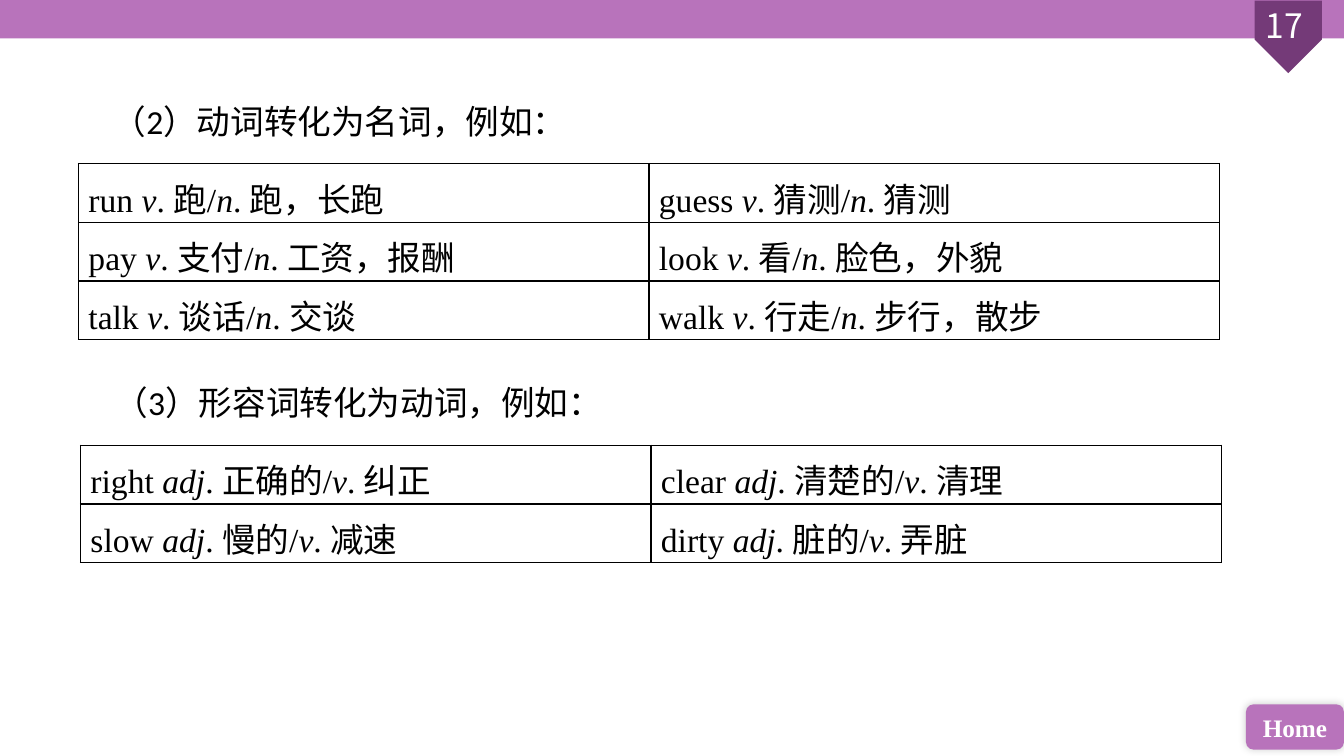
from lxml import etree
from pptx import Presentation
from pptx.dml.color import RGBColor
from pptx.enum.shapes import MSO_SHAPE
from pptx.enum.text import MSO_ANCHOR, PP_ALIGN
from pptx.oxml import parse_xml
from pptx.oxml.ns import qn
from pptx.util import Cm, Pt

RECT, PENTAGON, ROUNDED = MSO_SHAPE.RECTANGLE, MSO_SHAPE.PENTAGON, MSO_SHAPE.ROUNDED_RECTANGLE
CENTER, MIDDLE, TOP = PP_ALIGN.CENTER, MSO_ANCHOR.MIDDLE, MSO_ANCHOR.TOP
A_NS = 'xmlns:a="http://schemas.openxmlformats.org/drawingml/2006/main"'

LILAC, PLUM, WHITE, BLACK = "B873BB", "743A78", "FFFFFF", "000000"
CJK, SERIF, SANS = "Noto Sans CJK SC", "Times New Roman", "Calibri"

# Asterisks enclose the italic word classes
VERBS_TO_NOUNS = [
    ["run *v*. 跑/*n*. 跑，长跑", "guess *v*. 猜测/*n*. 猜测"],
    ["pay *v*. 支付/*n*. 工资，报酬", "look *v*. 看/*n*. 脸色，外貌"],
    ["talk *v*. 谈话/*n*. 交谈", "walk *v*. 行走/*n*. 步行，散步"],
]
ADJECTIVES_TO_VERBS = [
    ["right *adj*. 正确的/*v*. 纠正", "clear *adj*. 清楚的/*v*. 清理"],
    ["slow *adj*. 慢的/*v*. 减速", "dirty *adj*. 脏的/*v*. 弄脏"],
]


def rgb(color):
    return RGBColor.from_string(color)


def format_run(r, font, size, color, bold=False, italic=False):
    r.font.name, r.font.size = font, Pt(size)
    r.font.bold, r.font.italic = bold, italic
    r.font.color.rgb = rgb(color)
    etree.SubElement(r.font._element, qn("a:ea")).set("typeface", CJK)


def set_margins(frame, left=0.25, top=0):
    frame.margin_left = frame.margin_right = Cm(left)
    frame.margin_top = frame.margin_bottom = Cm(top)


def add_block(s, kind, x, y, w, h, color):
    sp = s.shapes.add_shape(kind, Cm(x), Cm(y), Cm(w), Cm(h))
    sp.shadow.inherit = False
    sp.fill.solid()
    sp.fill.fore_color.rgb = rgb(color)
    sp.line.fill.background()
    return sp


def add_text(s, x, y, w, h, text, font, size, color):
    tf = s.shapes.add_textbox(Cm(x), Cm(y), Cm(w), Cm(h)).text_frame
    tf.word_wrap = True
    tf.text = text
    p = tf.paragraphs[0]
    format_run(p.runs[0], font, size, color)
    return tf, p


def add_header(s, x, y, w, h):
    # Band across the top
    add_block(s, RECT, x, y, w, h, LILAC)
    # Page marker pointing down
    marker = add_block(s, PENTAGON, x + w - 2.32, y + 0.08, 1.83, 1.7, PLUM)
    marker.rotation = 90
    tf, p = add_text(s, x + w - 2.65, y, 2.49, 1.27, "17 ", CJK, 24, WHITE)
    p.alignment = CENTER


def add_home_button(s, x, y, w, h):
    sp = add_block(s, ROUNDED, x, y, w, h, LILAC)
    effects = sp._element.spPr.find(qn("a:effectLst"))
    effects.append(parse_xml(
        f'<a:outerShdw {A_NS} blurRad="{Pt(6)}" dist="0" dir="18900000">'
        f'<a:srgbClr val="{BLACK}"><a:alpha val="20000"/></a:srgbClr></a:outerShdw>'))
    tf = sp.text_frame
    tf.text = "Home"
    tf.vertical_anchor = MIDDLE
    set_margins(tf, 0.1, 0.1)
    p = tf.paragraphs[0]
    p.alignment = CENTER
    format_run(p.runs[0], SERIF, 18, WHITE, bold=True)


def add_borders(cell):
    tcPr = cell._tc.get_or_add_tcPr()
    for position, side in enumerate(("lnL", "lnR", "lnT", "lnB")):
        tcPr.insert(position, parse_xml(
            f'<a:{side} {A_NS} w="{Pt(1)}"><a:solidFill><a:srgbClr val="{BLACK}"/>'
            f'</a:solidFill></a:{side}>'))


def fill_cell(cell, text):
    cell.fill.background()
    cell.vertical_anchor = TOP
    set_margins(cell)
    add_borders(cell)
    p = cell.text_frame.paragraphs[0]
    p.line_spacing = 1.2
    for i, part in enumerate(text.split("*")):
        r = p.add_run()
        r.text = part
        format_run(r, SERIF, 24, BLACK, italic=i % 2 == 1)


def add_word_section(s, x, y, w, heading, rows, row_h=1.48):
    # Heading with an indented first line
    tf, p = add_text(s, x - 0.66, y, w + 1.88, 1.48, heading, SANS, 24, BLACK)
    set_margins(tf, 0.25, 0)
    p.line_spacing = 1.2
    p._p.get_or_add_pPr().set("indent", str(Cm(1.27)))
    # Word table
    table = s.shapes.add_table(len(rows), len(rows[0]), Cm(x), Cm(y + 1.79),
                               Cm(w), Cm(row_h * len(rows))).table
    table.first_row = table.horz_banding = False
    for column in table.columns:
        column.width = Cm(w / len(rows[0]))
    for i, row in enumerate(rows):
        table.rows[i].height = Cm(row_h)
        for j, text in enumerate(row):
            fill_cell(table.cell(i, j), text)


def main():
    prs = Presentation()
    prs.slide_width, prs.slide_height = Cm(33.87), Cm(19.05)
    s = prs.slides.add_slide(prs.slide_layouts[6])
    add_header(s, 0, 0, 33.87, 0.97)
    add_home_button(s, 31.4, 17.75, 2.47, 1.14)
    add_word_section(s, 1.98, 2.33, 28.75, "（2）动词转化为名词，例如：", VERBS_TO_NOUNS)
    add_word_section(s, 2.03, 9.43, 28.75, "（3）形容词转化为动词，例如：", ADJECTIVES_TO_VERBS)
    prs.save("out.pptx")


if __name__ == "__main__":
    main()
